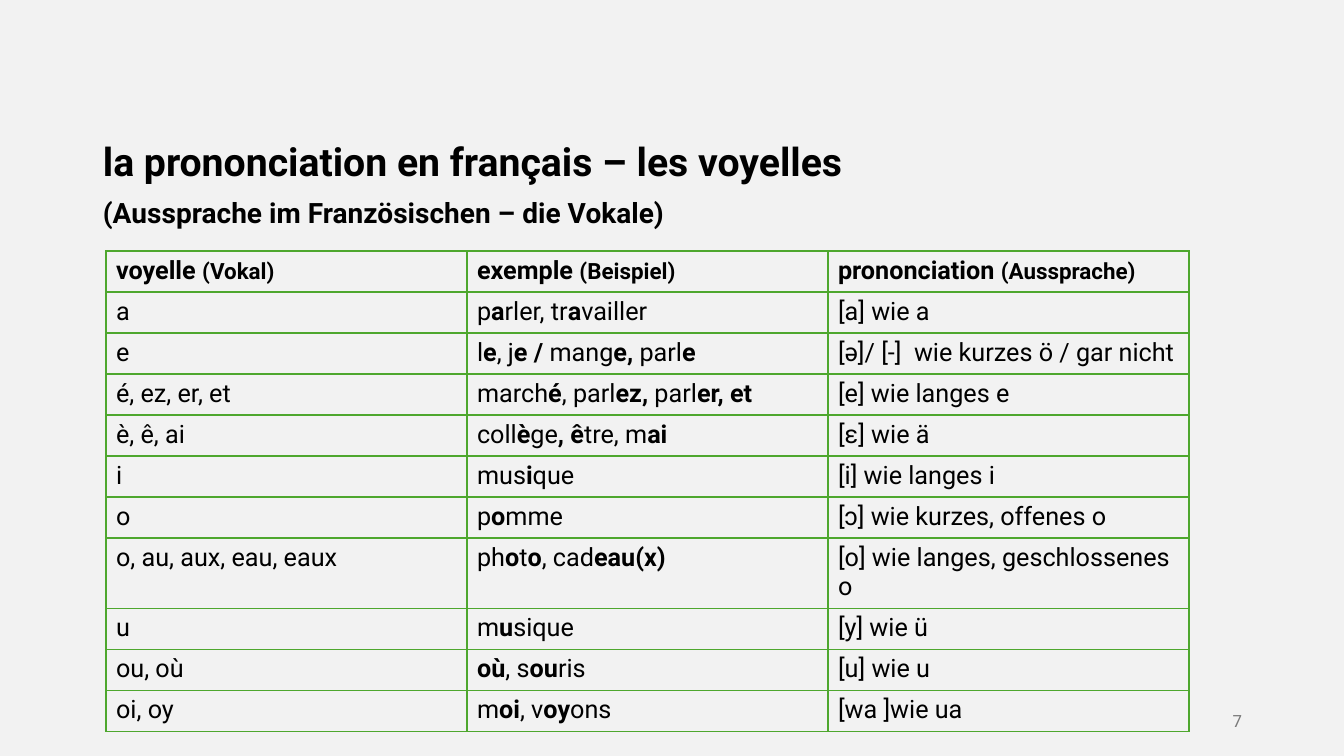
from lxml import etree
from pptx import Presentation
from pptx import util as u
from pptx.dml.color import RGBColor
from pptx.enum import text
from pptx.oxml import ns

# Text between asterisks is bold.
HEADS = [
    "*la prononciation en français – les voyelles*",
    "*(Aussprache im Französischen – die Vokale)*",
]
HEAD_SIZES = [28, 20]
TITLES = [
    ("voyelle ", "(Vokal)"),
    ("exemple ", "(Beispiel)"),
    ("prononciation ", "(Aussprache)"),
]
VOWELS = [
    ("a", "p*a*rler, tr*a*vailler", "[a] wie a"),
    ("e", "l*e*, j*e / *mang*e, *parl*e*", "[ə]/ [-]  wie kurzes ö / gar nicht"),
    ("é, ez, er, et", "march*é*, parl*ez, *parl*er, et*", "[e] wie langes e"),
    ("è, ê, ai", "coll*è*ge*, ê*tre, m*ai*", "[ɛ] wie ä"),
    ("i", "mus*i*que", "[i] wie langes i"),
    ("o", "p*o*mme", "[ɔ] wie kurzes, offenes o"),
    ("o, au, aux, eau, eaux", "ph*o*t*o*, cad*eau(x)*", "[o] wie langes, geschlossenes o"),
    ("u", "m*u*sique", "[y] wie ü"),
    ("ou, où", "*où*, s*ou*ris", "[u] wie u"),
    ("oi, oy", "m*oi*, v*oy*ons", "[wa ]wie ua"),
]
PAGE = "7"

COLORS = {"back": "F2F2F2", "ink": "000000", "line": "4EA72E", "page": "797979"}
FONT = "Roboto"
PX = 914400 / 100.8
WIDE, HIGH = 1344, 756
HEAD_BOX = (93, 138, 1159, 480)
PAGE_BOX = (950, 701, 302, 40)
LEFT, TOP, COL, ROW = 106, 251, 361, 41
SIZE, SMALL = 18, 16


def px(n):
    return u.Emu(round(n * PX))


def rgb(name):
    return RGBColor.from_string(COLORS[name])


def add_run(para, words, size, bold=False, color="ink"):
    run = para.add_run()
    run.text = words
    for key, val in {"name": FONT, "size": u.Pt(size), "bold": bold}.items():
        setattr(run.font, key, val)
    run.font.color.rgb = rgb(color)


def add_marked(para, words, size):
    """Add runs, switching bold on and off at each asterisk."""
    for i, part in enumerate(words.split("*")):
        if part:
            add_run(para, part, size, bold=i % 2 == 1)


def add_box(slide, box):
    frame = slide.shapes.add_textbox(*map(px, box)).text_frame
    frame.word_wrap = True
    return frame


def add_borders(cell, bottom):
    props = cell._tc.get_or_add_tcPr()
    for side, width in {"L": 1, "R": 1, "T": 1, "B": bottom}.items():
        line = etree.SubElement(props, ns.qn("a:ln" + side), w=str(u.Pt(width)))
        fill = etree.SubElement(line, ns.qn("a:solidFill"))
        etree.SubElement(fill, ns.qn("a:srgbClr"), val=COLORS["line"])


def add_heads(slide):
    frame = add_box(slide, HEAD_BOX)
    for i, (words, size) in enumerate(zip(HEADS, HEAD_SIZES)):
        para = frame.add_paragraph() if i else frame.paragraphs[0]
        para.line_spacing = 0.9
        para.space_before = u.Pt(10)
        add_marked(para, words, size)


def add_vowels(slide):
    rows, cols = len(VOWELS) + 1, len(TITLES)
    box = (LEFT, TOP, COL * cols, ROW * rows)
    table = slide.shapes.add_table(rows, cols, *map(px, box)).table
    table.first_row = table.horz_banding = False
    for r in range(rows):
        for c in range(cols):
            cell = table.cell(r, c)
            # The rule under the titles belongs to the rows on both its sides.
            add_borders(cell, bottom=1 if r else 2)
            cell.fill.background()
            para = cell.text_frame.paragraphs[0]
            if r:
                add_marked(para, VOWELS[r - 1][c], SIZE)
            else:
                for words, size in zip(TITLES[c], (SIZE, SMALL)):
                    add_run(para, words, size, bold=True)
    for c in range(cols):
        tc = table.cell(1, c)._tc
        tc.tcPr.find(ns.qn("a:lnT")).set("w", str(u.Pt(2)))


def add_page(slide):
    frame = add_box(slide, PAGE_BOX)
    frame.vertical_anchor = text.MSO_ANCHOR.MIDDLE
    para = frame.paragraphs[0]
    para.alignment = text.PP_ALIGN.RIGHT
    add_run(para, PAGE, 12, color="page")


def main():
    deck = Presentation()
    deck.slide_width, deck.slide_height = px(WIDE), px(HIGH)
    slide = deck.slides.add_slide(deck.slide_layouts[6])
    slide.background.fill.solid()
    slide.background.fill.fore_color.rgb = rgb("back")
    add_heads(slide)
    add_page(slide)
    add_vowels(slide)
    deck.save("out.pptx")


if __name__ == "__main__":
    main()
